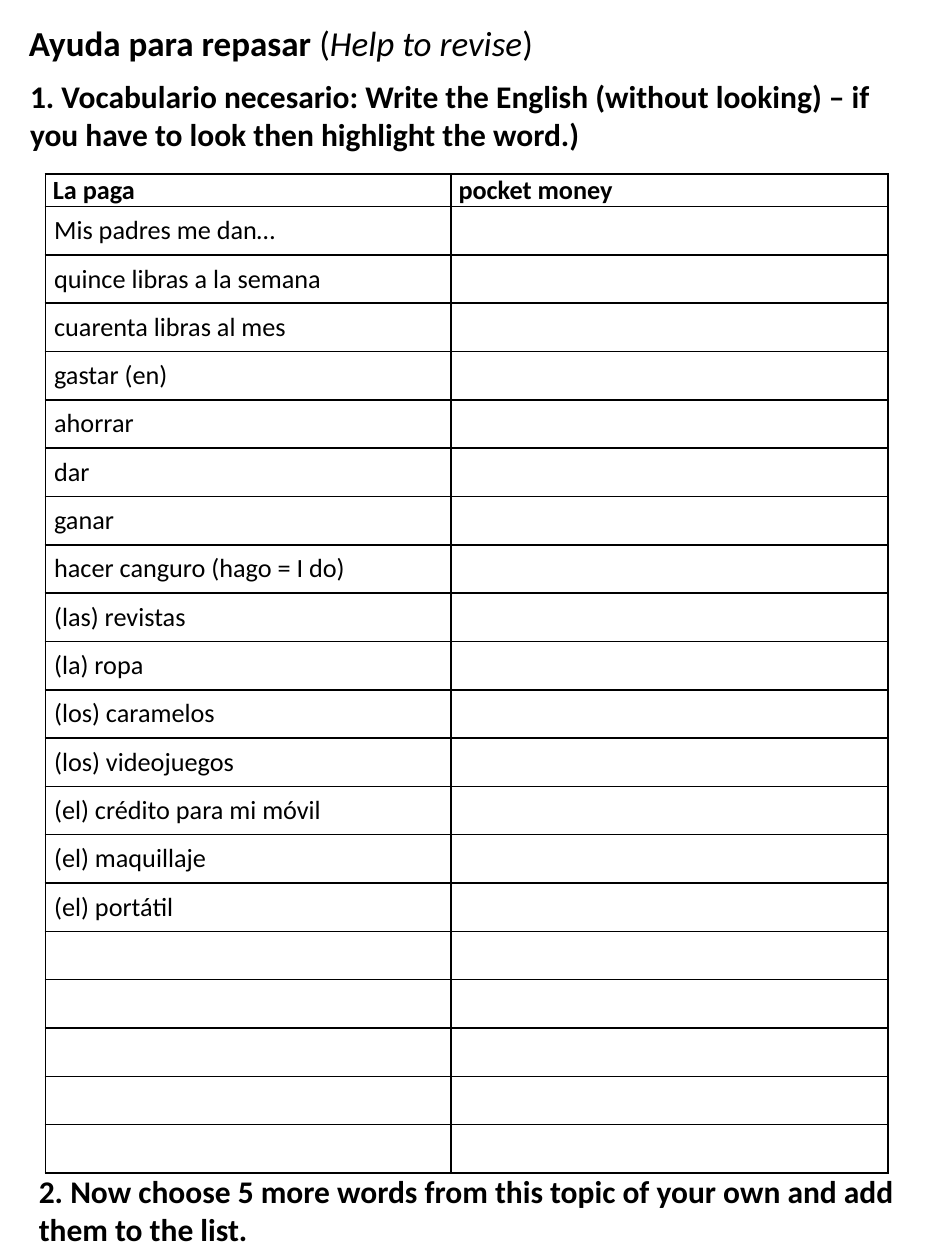
from pptx import Presentation
from pptx.dml.color import RGBColor
from pptx.enum.text import MSO_ANCHOR, MSO_AUTO_SIZE, PP_ALIGN
from pptx.oxml import parse_xml
from pptx.oxml.ns import nsdecls
from pptx.util import Inches, Pt

COLORS = {"text": "000000", "border": "000000"}
WORDS = [
    "Mis padres me dan…", "quince libras a la semana", "cuarenta libras al mes",
    "gastar (en)", "ahorrar", "dar", "ganar", "hacer canguro (hago = I do)",
    "(las) revistas", "(la) ropa", "(los) caramelos", "(los) videojuegos",
    "(el) crédito para mi móvil", "(el) maquillaje", "(el) portátil",
]
BLANK_ROWS = 5
HEADER_H = 0.26
TABLE_H = 7.93


def add_run(p, text, size, bold=False, italic=False):
    r = p.add_run()
    r.text = text
    for name, value in {"name": "Calibri", "size": Pt(size),
                        "bold": bold, "italic": italic}.items():
        setattr(r.font, name, value)
    r.font.color.rgb = RGBColor.from_string(COLORS["text"])


def add_borders(cell):
    tcPr = cell._tc.get_or_add_tcPr()
    for i, side in enumerate(("lnL", "lnR", "lnT", "lnB")):
        tcPr.insert(i, parse_xml(
            f'<a:{side} {nsdecls("a")} w="{Pt(1)}"><a:solidFill>'
            f'<a:srgbClr val="{COLORS["border"]}"/></a:solidFill></a:{side}>'))


prs = Presentation()
prs.slide_width, prs.slide_height = Inches(7.5), Inches(10)
s = prs.slides.add_slide(prs.slide_layouts[5])

# Title
title = s.shapes.title
title.left, title.top = Inches(0.13), Inches(0.12)
title.width, title.height = Inches(7.01), Inches(0.44)
tf = title.text_frame
for name, value in {"word_wrap": True, "vertical_anchor": MSO_ANCHOR.TOP,
                    "auto_size": MSO_AUTO_SIZE.NONE}.items():
    setattr(tf, name, value)
p = tf.paragraphs[0]
p.alignment = PP_ALIGN.LEFT
add_run(p, "Ayuda para repasar ", 20, bold=True)
add_run(p, "(", 20)
add_run(p, "Help to revise", 20, italic=True)
add_run(p, ")", 20)

# Instructions above and below the table
for left, top, text in [
    (0.14, 0.56, "1. Vocabulario necesario: Write the English (without looking) – "
                 "if you have to look then highlight the word.)"),
    (0.21, 9.25, "2. Now choose 5 more words from this topic of your own "
                 "and add them to the list."),
]:
    sp = s.shapes.add_textbox(Inches(left), Inches(top), Inches(7), Inches(0.71))
    sp.text_frame.word_wrap = True
    add_run(sp.text_frame.paragraphs[0], text, 18, bold=True)

# Vocabulary table
rows = [("La paga", "pocket money")]
rows += [(word, "") for word in WORDS + [""] * BLANK_ROWS]
table = s.shapes.add_table(len(rows), 2, Inches(0.36), Inches(1.38),
                           Inches(6.69), Inches(TABLE_H)).table
table.horz_banding = False
for column, width in zip(table.columns, (3.22, 3.47)):
    column.width = Inches(width)
for i, row in enumerate(rows):
    header = i == 0
    table.rows[i].height = Inches(
        HEADER_H if header else (TABLE_H - HEADER_H) / (len(rows) - 1))
    for j, text in enumerate(row):
        cell = table.cell(i, j)
        side = Inches(0.06 if header else 0.07)
        for name, value in {"margin_left": side, "margin_right": side,
                            "margin_top": 0, "margin_bottom": 0,
                            "vertical_anchor": MSO_ANCHOR.MIDDLE}.items():
            setattr(cell, name, value)
        cell.fill.background()
        add_borders(cell)
        if text:
            add_run(cell.text_frame.paragraphs[0], text, 15, bold=header)

prs.save("out.pptx")
